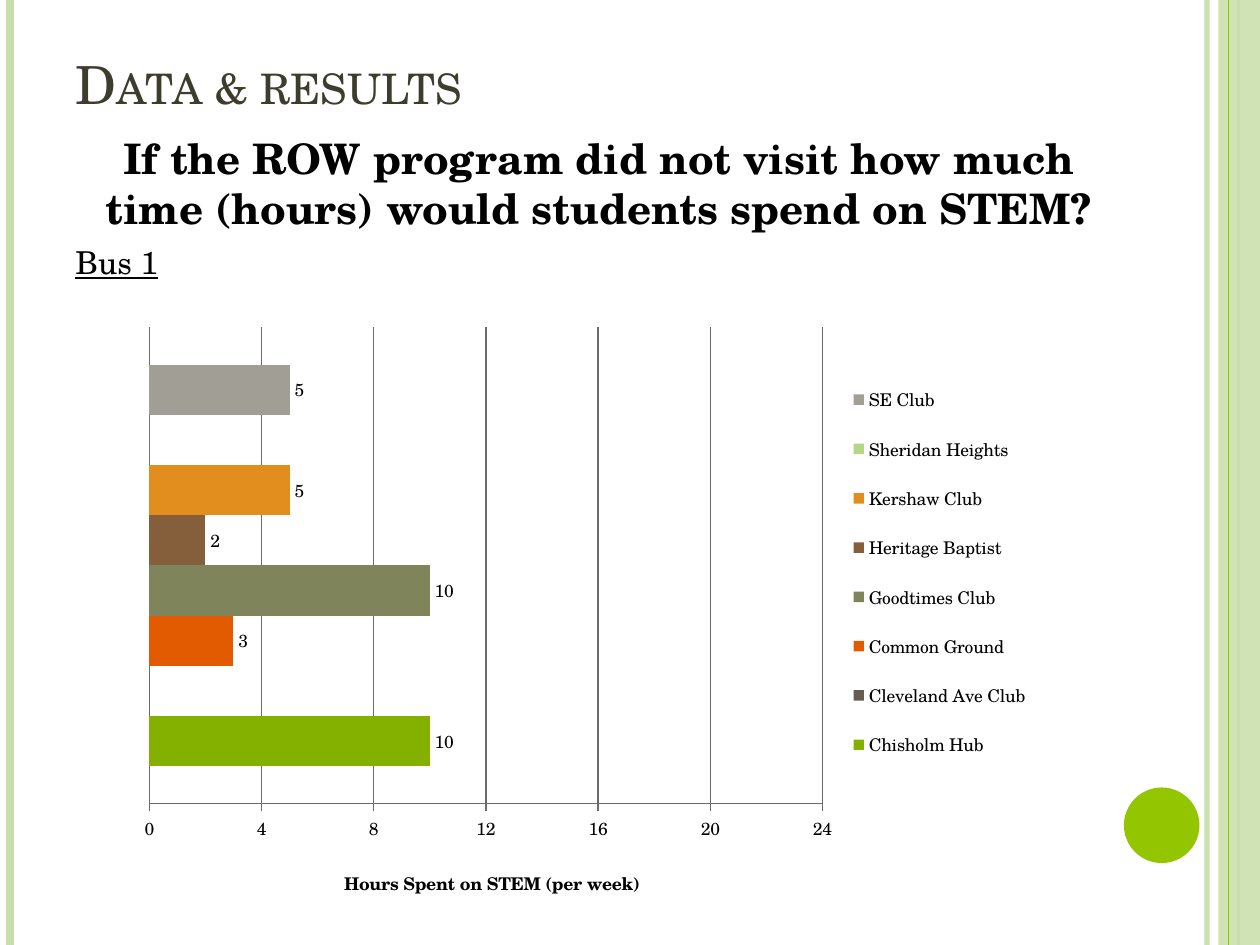
from dataclasses import dataclass

from lxml import etree
from pptx import Presentation
from pptx.chart.data import CategoryChartData
from pptx.dml.color import RGBColor
from pptx.enum.chart import (XL_CHART_TYPE, XL_LABEL_POSITION,
                             XL_LEGEND_POSITION, XL_TICK_LABEL_POSITION,
                             XL_TICK_MARK)
from pptx.enum.shapes import MSO_CONNECTOR, MSO_SHAPE
from pptx.enum.text import MSO_ANCHOR, PP_ALIGN
from pptx.oxml import parse_xml
from pptx.oxml.ns import nsdecls, qn
from pptx.util import Inches, Pt

BAR = XL_CHART_TYPE.BAR_CLUSTERED
OUTSIDE = XL_LABEL_POSITION.OUTSIDE_END
RIGHT = XL_LEGEND_POSITION.RIGHT
LOW = XL_TICK_LABEL_POSITION.LOW
TICK_OUT = XL_TICK_MARK.OUTSIDE
NO_TICK = XL_TICK_MARK.NONE
STRAIGHT = MSO_CONNECTOR.STRAIGHT
RECT, OVAL = MSO_SHAPE.RECTANGLE, MSO_SHAPE.OVAL
BOTTOM = MSO_ANCHOR.BOTTOM
LEFT, CENTER = PP_ALIGN.LEFT, PP_ALIGN.CENTER


@dataclass(frozen=True)
class Theme:
    font: str = "TeX Gyre Schola"
    ink: str = "000000"
    title: str = "3E3D2D"
    pale: str = "C8DFAB"
    green: str = "94C600"
    grid: str = "6B6B6B"
    head: int = 30
    ask: int = 24
    group: int = 18
    small: int = 10


THEME = Theme()
SITES = [
    ("Chisholm Hub", 10, "84B000"),
    ("Cleveland Ave Club", 0, "655D50"),
    ("Common Ground", 3, "E35B00"),
    ("Goodtimes Club", 10, "80845A"),
    ("Heritage Baptist", 2, "855F3B"),
    ("Kershaw Club", 5, "E28E1E"),
    ("Sheridan Heights", 0, "B5D686"),
    ("SE Club", 5, "A19E96"),
]


def rgb(code):
    return RGBColor.from_string(code)


def fade(fill, pct):
    color = fill.find(".//" + qn("a:srgbClr"))
    etree.SubElement(color, qn("a:alpha")).set("val", str(pct * 1000))


def style(font, size, color=THEME.ink, bold=False):
    font.name, font.size, font.bold = THEME.font, Pt(size), bold
    font.color.rgb = rgb(color)


def add_run(par, text, size, color=THEME.ink, bold=False):
    run = par.add_run()
    run.text = text
    style(run.font, size, color, bold)
    return run


def add_rule(slide, x, top, high, color, width, alpha=100):
    rule = slide.shapes.add_connector(
        STRAIGHT, Inches(x), Inches(top), Inches(x), Inches(top + high))
    rule.line.color.rgb = rgb(color)
    rule.line.width = Pt(width)
    props = rule._element.spPr
    if alpha < 100:
        fade(props, alpha)
    etree.SubElement(props, qn("a:effectLst"))


def add_solid(slide, kind, box, color, alpha=100):
    shape = slide.shapes.add_shape(kind, *map(Inches, box))
    shape.shadow.inherit = False
    shape.fill.solid()
    shape.fill.fore_color.rgb = rgb(color)
    shape.line.fill.background()
    if alpha < 100:
        fade(shape._element.spPr, alpha)


def add_frame(slide, box):
    x, y, wide, high = box
    edge = x + wide
    add_rule(slide, edge - 0.42, y, high, THEME.pale, 3, 93)
    add_rule(slide, x + 0.08, y, high, THEME.pale, 4.5)
    add_rule(slide, edge - 0.17, y, high, THEME.pale, 1.5)
    add_solid(slide, RECT, (edge - 0.33, y, 0.33, high), THEME.pale, 87)
    add_rule(slide, edge - 0.25, y, high, THEME.green, 0.75)
    add_solid(slide, OVAL, (edge - 1.08, y + high - 1.25, 0.6, 0.6),
              THEME.green)


def add_title(slide, box):
    title = slide.shapes.title
    title.left, title.top, title.width, title.height = map(Inches, box)
    frame = title.text_frame
    frame.vertical_anchor = BOTTOM
    par = frame.paragraphs[0]
    par.alignment = LEFT
    run = add_run(par, "Data & results", THEME.head, THEME.title)
    run.font._element.set("cap", "small")


def add_body(slide, box):
    frame = slide.shapes.add_textbox(*map(Inches, box)).text_frame
    frame.word_wrap = True
    ask, group = frame.paragraphs[0], frame.add_paragraph()
    ask.alignment = CENTER
    ask.space_before = group.space_before = Pt(6)
    add_run(ask, "If the ROW program did not visit how much time (hours) "
                 "would students spend on STEM?", THEME.ask, bold=True)
    add_run(group, "Bus 1", THEME.group).font.underline = True


def set_layout(part, inner=False, **spots):
    tags = '<c:layoutTarget val="inner"/>' if inner else ""
    tags += "".join(f'<c:{key}Mode val="edge"/>' for key in "xy")
    tags += "".join(f'<c:{key} val="{val}"/>' for key, val in spots.items())
    node = parse_xml(f'<c:layout {nsdecls("c")}><c:manualLayout>{tags}'
                     '</c:manualLayout></c:layout>')
    old = part.find(qn("c:layout"))
    if old is not None:
        part.remove(old)
    prior = [part.find(qn(tag)) for tag in ("c:tx", "c:legendPos")]
    at = max([part.index(tag) + 1 for tag in prior if tag is not None],
             default=0)
    part.insert(at, node)


def style_axes(chart):
    chart.category_axis.visible = False
    axis = chart.value_axis
    axis.minimum_scale, axis.maximum_scale, axis.major_unit = 0, 24, 4
    axis.major_tick_mark, axis.minor_tick_mark = TICK_OUT, NO_TICK
    axis.tick_label_position = LOW
    axis.has_major_gridlines = True
    for line in (axis.format.line, axis.major_gridlines.format.line):
        line.color.rgb = rgb(THEME.grid)
        line.width = Pt(0.75)
    par = axis.axis_title.text_frame.paragraphs[0]
    add_run(par, "Hours Spent on STEM (per week)", THEME.small, bold=True)
    set_layout(axis.axis_title._element, x=0.23, y=0.92)


def add_bars(slide, box):
    data = CategoryChartData()
    data.categories = ["1"]
    for name, hours, _ in SITES:
        data.add_series(name, [hours])
    chart = slide.shapes.add_chart(BAR, *map(Inches, box), data).chart
    style(chart.font, THEME.small)
    chart.has_title = False
    chart.has_legend = True
    chart.legend.position = RIGHT
    chart.legend.include_in_layout = False
    set_layout(chart.legend._element, x=0.75, y=0.08, w=0.24, h=0.7)
    plot = chart.plots[0]
    plot.gap_width, plot.overlap, plot.vary_by_categories = 150, 0, False
    set_layout(chart._chartSpace.chart.plotArea, inner=True,
               x=0.025, y=0.02, w=0.72, h=0.797)
    for bar, (_, hours, color) in zip(plot.series, SITES):
        bar.format.fill.solid()
        bar.format.fill.fore_color.rgb = rgb(color)
        bar.invert_if_negative = False
        if hours:
            bar.data_labels.show_value = True
            bar.data_labels.position = OUTSIDE
    style_axes(chart)


def main():
    deck = Presentation()
    deck.slide_width, deck.slide_height = Inches(10), Inches(7.5)
    slide = deck.slides.add_slide(deck.slide_layouts[5])
    add_frame(slide, (0, 0, 10, 7.5))
    add_title(slide, (0.5, 0.08, 8.17, 0.88))
    add_body(slide, (0.5, 1, 8.5, 1.4))
    add_bars(slide, (1, 2.5, 7.42, 4.75))
    deck.save("out.pptx")


if __name__ == "__main__":
    main()
